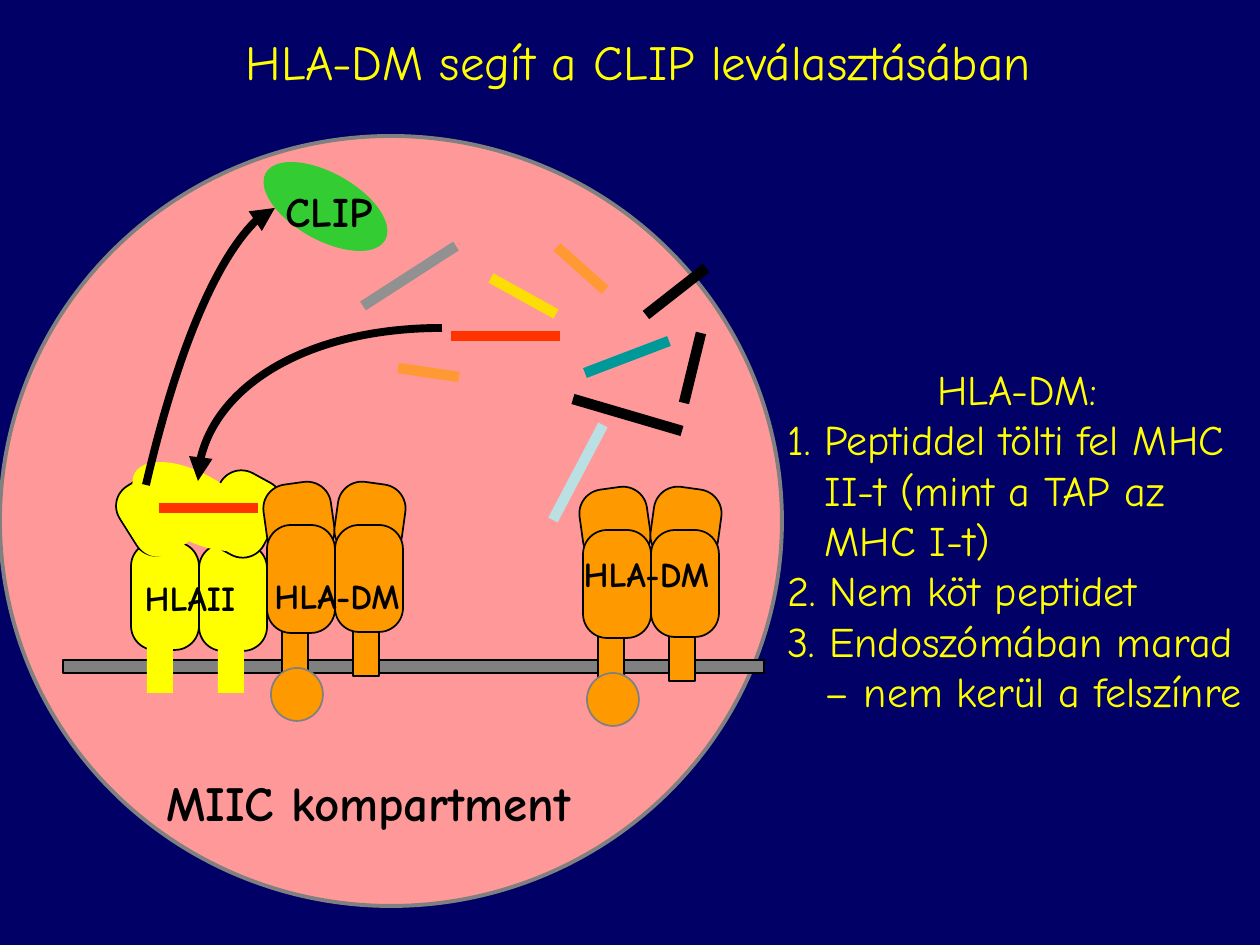
from dataclasses import dataclass
from typing import Optional

from lxml import etree
from pptx import Presentation
from pptx.dml.color import RGBColor
from pptx.enum import shapes, text
from pptx.oxml import ns
from pptx.util import Emu, Pt

EMU_PER_PX = 914400 / 126
FONT = "Comic Neue"
NAVY = RGBColor(0x00, 0x00, 0x66)
PINK = RGBColor(0xFF, 0x99, 0x99)
GREY = RGBColor(0x80, 0x80, 0x80)
SILVER = RGBColor(0x91, 0x91, 0x91)
INK = RGBColor(0x00, 0x02, 0x02)
BLACK = RGBColor(0x00, 0x00, 0x00)
YELLOW = RGBColor(0xFF, 0xFF, 0x00)
GOLD = RGBColor(0xFD, 0xDD, 0x06)
ORANGE = RGBColor(0xFF, 0x99, 0x00)
APRICOT = RGBColor(0xFF, 0x99, 0x33)
RED = RGBColor(0xFF, 0x33, 0x00)
GREEN = RGBColor(0x33, 0xCC, 0x33)
TEAL = RGBColor(0x00, 0x99, 0x99)
PALE_BLUE = RGBColor(0xBB, 0xE0, 0xE3)

RECTANGLE = shapes.MSO_SHAPE.RECTANGLE
ROUNDED = shapes.MSO_SHAPE.ROUNDED_RECTANGLE
OVAL = shapes.MSO_SHAPE.OVAL
LEFT = text.PP_ALIGN.LEFT
CENTER = text.PP_ALIGN.CENTER


@dataclass
class Part:
    kind: shapes.MSO_SHAPE
    left: int
    top: int
    width: int
    height: int
    fill: RGBColor
    line: Optional[RGBColor] = None
    rotation: float = 0
    line_width: float = 1


@dataclass
class Peptide:
    start: tuple[int, int]
    end: tuple[int, int]
    color: RGBColor


@dataclass
class Label:
    words: str
    box: tuple[int, int, int, int]
    size: int = 20
    align: text.PP_ALIGN = CENTER
    wrap: bool = True


def px(value: int) -> Emu:
    return Emu(round(value * EMU_PER_PX))


def place(shape, box: tuple[int, int, int, int]) -> None:
    for name, value in zip(("left", "top", "width", "height"), box):
        setattr(shape, name, px(value))


def format_frame(frame, wrap: bool) -> None:
    values = {
        "word_wrap": wrap,
        "auto_size": text.MSO_AUTO_SIZE.NONE,
        "vertical_anchor": text.MSO_ANCHOR.TOP,
    }
    for name, value in values.items():
        setattr(frame, name, value)


def write(paragraph, words: str, size: int, color: RGBColor, align, bold: bool = False) -> None:
    run = paragraph.add_run()
    run.text = words
    for name, value in {"name": FONT, "size": Pt(size), "bold": bold}.items():
        setattr(run.font, name, value)
    run.font.color.rgb = color
    for name, value in {"alignment": align, "space_before": Pt(0), "line_spacing": 1.0}.items():
        setattr(paragraph, name, value)


def draw_part(slide, part: Part, dx: int = 0, dy: int = 0) -> None:
    shape = slide.shapes.add_shape(
        part.kind, px(part.left + dx), px(part.top + dy), px(part.width), px(part.height)
    )
    shape.shadow.inherit = False
    shape.rotation = part.rotation
    if part.kind == ROUNDED:
        shape.adjustments[0] = 0.354
    shape.fill.solid()
    shape.fill.fore_color.rgb = part.fill
    if part.line is None:
        shape.line.fill.background()
    else:
        shape.line.color.rgb = part.line
        shape.line.width = Pt(part.line_width)


def draw_peptide(slide, peptide: Peptide) -> None:
    points = [px(value) for value in (*peptide.start, *peptide.end)]
    connector = slide.shapes.add_connector(shapes.MSO_CONNECTOR.STRAIGHT, *points)
    connector.line.color.rgb = peptide.color
    connector.line.width = Pt(6)
    etree.SubElement(connector._element.spPr, ns.qn("a:effectLst"))


def draw_curved_arrow(slide, start: tuple[int, int], curve: list[tuple[int, int]]) -> None:
    builder = slide.shapes.build_freeform(*start, scale=EMU_PER_PX)
    builder.add_line_segments(curve, close=False)
    shape = builder.convert_to_shape()
    shape.shadow.inherit = False
    shape.fill.background()
    shape.line.color.rgb = BLACK
    shape.line.width = Pt(4.5)
    outline = shape._element.spPr.find(".//" + ns.qn("a:path"))
    bezier = etree.SubElement(outline, ns.qn("a:cubicBezTo"))
    for segment in outline.findall(ns.qn("a:lnTo")):
        bezier.append(segment[0])
        outline.remove(segment)
    etree.SubElement(shape.line._get_or_add_ln(), ns.qn("a:tailEnd"), type="triangle")


def draw_label(slide, label: Label) -> None:
    box = slide.shapes.add_textbox(*(px(value) for value in label.box))
    format_frame(box.text_frame, label.wrap)
    write(box.text_frame.paragraphs[0], label.words, label.size, BLACK, label.align, bold=True)


def fill_title(title) -> None:
    place(title, (195, 25, 886, 72))
    format_frame(title.text_frame, False)
    write(title.text_frame.paragraphs[0], "HLA-DM segít a CLIP leválasztásában", 28, YELLOW, CENTER)


def fill_list(body) -> None:
    place(body, (775, 357, 485, 416))
    frame = body.text_frame
    format_frame(frame, True)
    for index, (words, align) in enumerate(ROLES):
        paragraph = frame.add_paragraph() if index else frame.paragraphs[0]
        write(paragraph, words, 24, YELLOW, align)
        properties = paragraph._p.get_or_add_pPr()
        for name, value in {"marL": px(37), "indent": px(-37)}.items():
            properties.set(name, str(value))
        etree.SubElement(properties, ns.qn("a:buNone"))


ROLES = [
    ("HLA-DM:", CENTER),
    ("1. Peptiddel tölti fel MHC II-t (mint a TAP az MHC I-t)", LEFT),
    ("2. Nem köt peptidet", LEFT),
    ("3. Endoszómában marad – nem kerül a felszínre", LEFT),
]
COMPARTMENT = [
    Part(OVAL, 0, 136, 782, 770, PINK, GREY, line_width=2.25),
    Part(RECTANGLE, 63, 660, 701, 13, GREY, INK),
]
HLA_II = [
    Part(ROUNDED, 131, 542, 68, 108, YELLOW, INK),
    Part(ROUNDED, 199, 544, 68, 107, YELLOW, INK),
    Part(ROUNDED, 123, 475, 66, 78, YELLOW, INK, 327.7),
    Part(OVAL, 132, 450, 137, 76, PINK),
    Part(ROUNDED, 208, 473, 68, 82, YELLOW, INK, 28.6),
    Part(RECTANGLE, 147, 585, 26, 108, YELLOW),
    Part(RECTANGLE, 218, 585, 26, 108, YELLOW),
    Part(ROUNDED, 125, 476, 66, 78, YELLOW, rotation=327.7),
]
HLA_DM = [
    Part(ROUNDED, 265, 483, 68, 73, ORANGE, INK, 352.1),
    Part(ROUNDED, 336, 483, 68, 73, ORANGE, INK, 7.9),
    Part(RECTANGLE, 282, 568, 26, 108, ORANGE, INK),
    Part(ROUNDED, 267, 525, 68, 108, ORANGE, INK),
    Part(RECTANGLE, 353, 568, 26, 108, ORANGE, INK),
    Part(ROUNDED, 335, 525, 68, 107, ORANGE, INK),
    Part(OVAL, 271, 668, 52, 53, ORANGE, GREY),
]
CLIP_SITE = Part(OVAL, 126, 473, 137, 67, YELLOW, rotation=29.3)
FREE_CLIP = Part(OVAL, 257, 173, 137, 67, GREEN, rotation=29.3)
PEPTIDES = [
    Peptide((460, 336), (560, 336), RED),
    Peptide((363, 306), (456, 246), SILVER),
    Peptide((603, 425), (553, 520), PALE_BLUE),
    Peptide((556, 314), (491, 278), GOLD),
    Peptide((573, 399), (682, 431), BLACK),
    Peptide((646, 315), (706, 268), BLACK),
    Peptide((669, 341), (585, 373), TEAL),
    Peptide((459, 377), (398, 368), APRICOT),
    Peptide((557, 247), (605, 290), APRICOT),
    Peptide((701, 333), (684, 403), BLACK),
]
BOUND_PEPTIDES = [
    Peptide((159, 508), (258, 508), RED),
    Peptide((451, 336), (552, 336), RED),
]


def main() -> None:
    presentation = Presentation()
    presentation.slide_width, presentation.slide_height = px(1260), px(945)
    slide = presentation.slides.add_slide(presentation.slide_layouts[1])
    slide.background.fill.solid()
    slide.background.fill.fore_color.rgb = NAVY
    fill_title(slide.shapes.title)
    fill_list(slide.placeholders[1])

    for part in COMPARTMENT:
        draw_part(slide, part)
    for peptide in PEPTIDES:
        draw_peptide(slide, peptide)
    draw_label(slide, Label("MIIC kompartment", (154, 766, 556, 72), 28, LEFT))
    for part in HLA_II:
        draw_part(slide, part)
    draw_label(slide, Label("HLAII", (113, 570, 154, 54)))
    for dx, dy, label in (
        (316, 5, Label("HLA-DM", (557, 546, 179, 54))),
        (0, 0, Label("HLA-DM", (262, 568, 175, 54), align=LEFT, wrap=False)),
    ):
        for part in HLA_DM:
            draw_part(slide, part, dx, dy)
        draw_label(slide, label)
    draw_part(slide, CLIP_SITE)
    draw_curved_arrow(slide, (146, 485), [(180, 339), (236, 220), (275, 208)])
    draw_part(slide, FREE_CLIP)
    draw_label(slide, Label("CLIP", (273, 179, 157, 63), 24, LEFT))
    draw_curved_arrow(slide, (442, 328), [(307, 328), (198, 397), (198, 481)])
    for peptide in BOUND_PEPTIDES:
        draw_peptide(slide, peptide)
    presentation.save("out.pptx")


if __name__ == "__main__":
    main()
